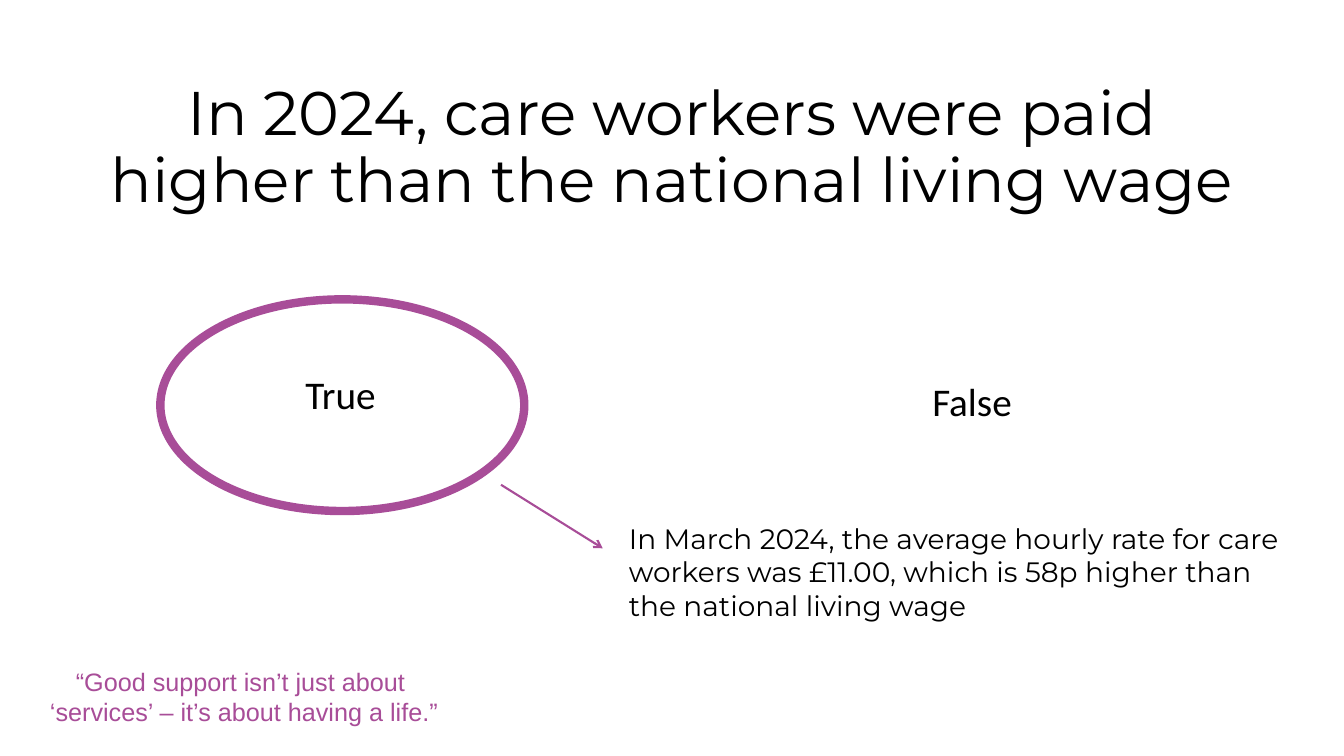
import pptx
import pptx.dml.color
import pptx.enum.shapes
import pptx.enum.text
import pptx.oxml.ns
import pptx.util
from lxml import etree

BLACK, PURPLE = "000000", "A84D98"
LEFT, CENTER = pptx.enum.text.PP_ALIGN.LEFT, pptx.enum.text.PP_ALIGN.CENTER

deck = pptx.Presentation()
deck.slide_width = pptx.util.Inches(13.333)
deck.slide_height = pptx.util.Inches(7.5)
slide = deck.slides.add_slide(deck.slide_layouts[6])


def rgb(color):
    return pptx.dml.color.RGBColor.from_string(color)


def place(*shares):
    """Turn alternating percentages of slide width and height into lengths."""
    sizes = (deck.slide_width, deck.slide_height) * 2
    return [int(size * share / 100) for size, share in zip(sizes, shares)]


texts = [
    # left, top, width, height; font, size, colour; alignment, line spacing; paragraphs
    ((1.28, 87.47, 33.75, 9.47), "Arial", 18, PURPLE, CENTER, 1.0,
     ["“Good support isn’t just about ", "‘services’ – it’s about having a life.”"]),
    ((6.9, 10.27, 86.25, 36.13), "Montserrat", 44, BLACK, CENTER, 0.9,
     ["In 2024, care workers were paid higher than the national living wage"]),
    ((21.98, 49.07, 9.38, 9.2), "Calibri", 28, BLACK, LEFT, 0.9, ["True"]),
    ((68.63, 50, 13.28, 9.2), "Calibri", 28, BLACK, LEFT, 0.9, ["False"]),
    ((46.05, 68.27, 50.03, 14.8), "Montserrat", 20, BLACK, LEFT, 1.0,
     ["In March 2024, the average hourly rate for care workers was £11.00, "
      "which is 58p higher than the national living wage"]),
]
for area, font, size, color, alignment, spacing, lines in texts:
    frame = slide.shapes.add_textbox(*place(*area)).text_frame
    frame.word_wrap = True
    for index, line in enumerate(lines):
        paragraph = frame.add_paragraph() if index else frame.paragraphs[0]
        paragraph.alignment = alignment
        paragraph.line_spacing = spacing
        run = paragraph.add_run()
        run.text = line
        run.font.name = font
        run.font.size = pptx.util.Pt(size)
        run.font.color.rgb = rgb(color)

answer_ring = slide.shapes.add_shape(
    pptx.enum.shapes.MSO_SHAPE.OVAL, *place(11.93, 39.6, 27.08, 28))
answer_ring.shadow.inherit = False
answer_ring.fill.background()
answer_ring.line.color.rgb = rgb(PURPLE)
answer_ring.line.width = pptx.util.Pt(6)

explanation_arrow = slide.shapes.add_connector(
    pptx.enum.shapes.MSO_CONNECTOR.STRAIGHT, *place(37.28, 64.13, 44.85, 72.53))
explanation_arrow.line.color.rgb = rgb(PURPLE)
explanation_arrow.line.width = pptx.util.Pt(1.5)
outline = explanation_arrow.line._get_or_add_ln()
etree.SubElement(outline, pptx.oxml.ns.qn("a:tailEnd"), type="arrow")
etree.SubElement(explanation_arrow._element.spPr, pptx.oxml.ns.qn("a:effectLst"))

deck.save("out.pptx")
